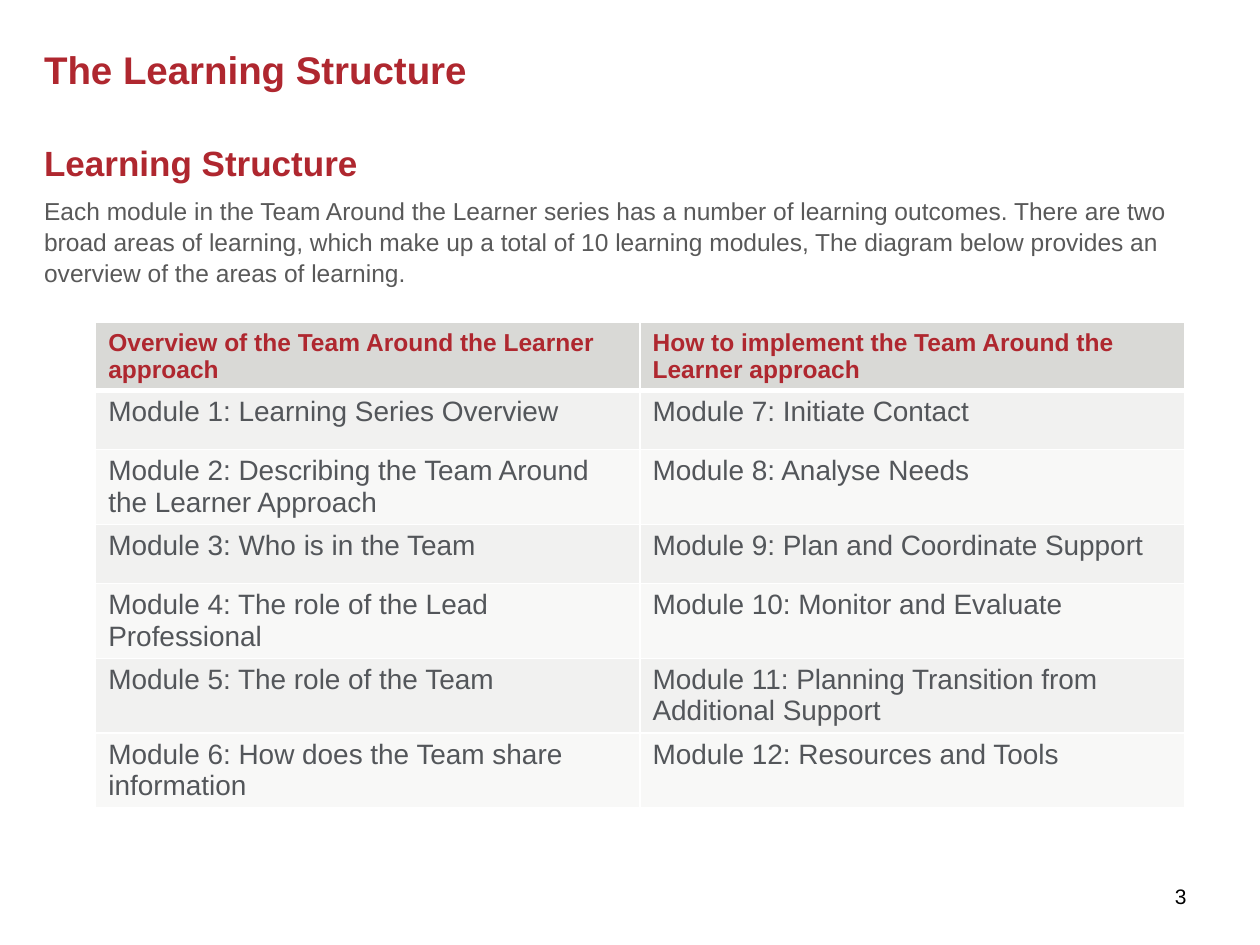
from lxml.etree import SubElement
from pptx import Presentation
from pptx.dml.color import RGBColor
from pptx.enum.text import MSO_ANCHOR, MSO_AUTO_SIZE, PP_ALIGN
from pptx.oxml.ns import qn
from pptx.util import Inches, Pt

COLS, ROWS = 100, 75
RED, GREY, SLATE, WHITE = "AF272F", "595959", "53565A", "FFFFFF"
HEADER_FILL, BANDS = "D9D9D6", ("F1F1F0", "F8F8F7")

TITLE = "The Learning Structure"
HEADING = "Learning Structure"
INTRO = (
    "Each module in the Team Around the Learner series has a number of learning "
    "outcomes. There are two broad areas of learning, which make up a total of 10 "
    "learning modules, The diagram below provides an overview of the areas of learning."
)
HEADERS = (
    "Overview of the Team Around the Learner approach",
    "How to implement the Team Around the Learner approach",
)
MODULES = (
    "Learning Series Overview",
    "Describing the Team Around the Learner Approach",
    "Who is in the Team",
    "The role of the Lead Professional",
    "The role of the Team",
    "How does the Team share information",
    "Initiate Contact",
    "Analyse Needs",
    "Plan and Coordinate Support",
    "Monitor and Evaluate",
    "Planning Transition from Additional Support",
    "Resources and Tools",
)


def rgb(value):
    return RGBColor.from_string(value)


def grid_box(prs, col, row, cols, rows):
    dx, dy = prs.slide_width / COLS, prs.slide_height / ROWS
    return [int(v) for v in (col * dx, row * dy, cols * dx, rows * dy)]


def assign(obj, values):
    for name, value in values.items():
        setattr(obj, name, value)


def place(sp, box):
    assign(sp, dict(zip(("left", "top", "width", "height"), box)))


def write(p, text, size, color, bold=False, **layout):
    assign(p, layout)
    r = p.add_run()
    r.text = text
    assign(r.font, {"name": "Arial", "size": Pt(size), "bold": bold})
    r.font.color.rgb = rgb(color)


def prepare_frame(sp, anchor=MSO_ANCHOR.TOP):
    tf = sp.text_frame
    assign(tf, {
        "word_wrap": True, "auto_size": MSO_AUTO_SIZE.NONE, "vertical_anchor": anchor,
        "margin_left": 0, "margin_right": 0, "margin_top": 0, "margin_bottom": 0,
    })
    return tf


def remove_bullet(p):
    pPr = p._p.get_or_add_pPr()
    pPr.set("marL", "0")
    pPr.set("indent", "0")
    SubElement(pPr, qn("a:buNone"))


def add_title(s, box):
    place(s.shapes.title, box)
    tf = prepare_frame(s.shapes.title)
    write(tf.paragraphs[0], TITLE, 22, RED, True, alignment=PP_ALIGN.LEFT, line_spacing=0.9)


def add_body(s, box):
    sp = s.placeholders[1]
    place(sp, box)
    tf = prepare_frame(sp)
    styles = ((HEADING, 20, RED, True, 0), (INTRO, 14, GREY, False, 3))
    for i, (text, size, color, bold, before) in enumerate(styles):
        p = tf.add_paragraph() if i else tf.paragraphs[0]
        remove_bullet(p)
        write(p, text, size, color, bold, space_before=Pt(before),
              space_after=Pt(3), line_spacing=1.05)


def set_borders(cell, widths):
    tcPr = cell._tc.get_or_add_tcPr()
    for side, width in widths.items():
        ln = SubElement(tcPr, qn(f"a:ln{side}"), w=str(Pt(width)))
        fill = SubElement(ln, qn("a:solidFill"))
        SubElement(fill, qn("a:srgbClr"), val=WHITE)


def add_modules_table(s, box, row_height):
    half = len(MODULES) // 2
    labels = [f"Module {n}: {name}" for n, name in enumerate(MODULES, 1)]
    rows = [HEADERS, *zip(labels[:half], labels[half:])]
    table = s.shapes.add_table(len(rows), len(HEADERS), *box).table
    for column in table.columns:
        column.width = box[2] // len(HEADERS)
    for i, texts in enumerate(rows):
        table.rows[i].height = row_height
        fill = BANDS[(i - 1) % 2] if i else HEADER_FILL
        style = (16, SLATE) if i else (14, RED, True)
        for j, text in enumerate(texts):
            cell = table.cell(i, j)
            set_borders(cell, {"L": 1, "R": 1, "T": 3 if i == 1 else 1, "B": 1 if i else 3})
            cell.fill.solid()
            cell.fill.fore_color.rgb = rgb(fill)
            write(cell.text_frame.paragraphs[0], text, *style)


def add_page_number(s, box):
    tf = prepare_frame(s.shapes.add_textbox(*box), MSO_ANCHOR.MIDDLE)
    write(tf.paragraphs[0], "3", 12, "000000", alignment=PP_ALIGN.CENTER)


def main():
    prs = Presentation()
    prs.slide_width, prs.slide_height = Inches(10), Inches(7.5)
    s = prs.slides.add_slide(prs.slide_layouts[1])
    s.background.fill.solid()
    s.background.fill.fore_color.rgb = rgb(WHITE)
    add_title(s, grid_box(prs, 3.5, 4.1, 92.5, 8.6))
    add_body(s, grid_box(prs, 3.5, 11.1, 92.5, 55.9))
    add_modules_table(s, grid_box(prs, 7.6, 25.6, 86.4, 32.9), Inches(0.47))
    add_page_number(s, grid_box(prs, 91.3, 69.1, 4.8, 4))
    prs.save("out.pptx")


if __name__ == "__main__":
    main()
